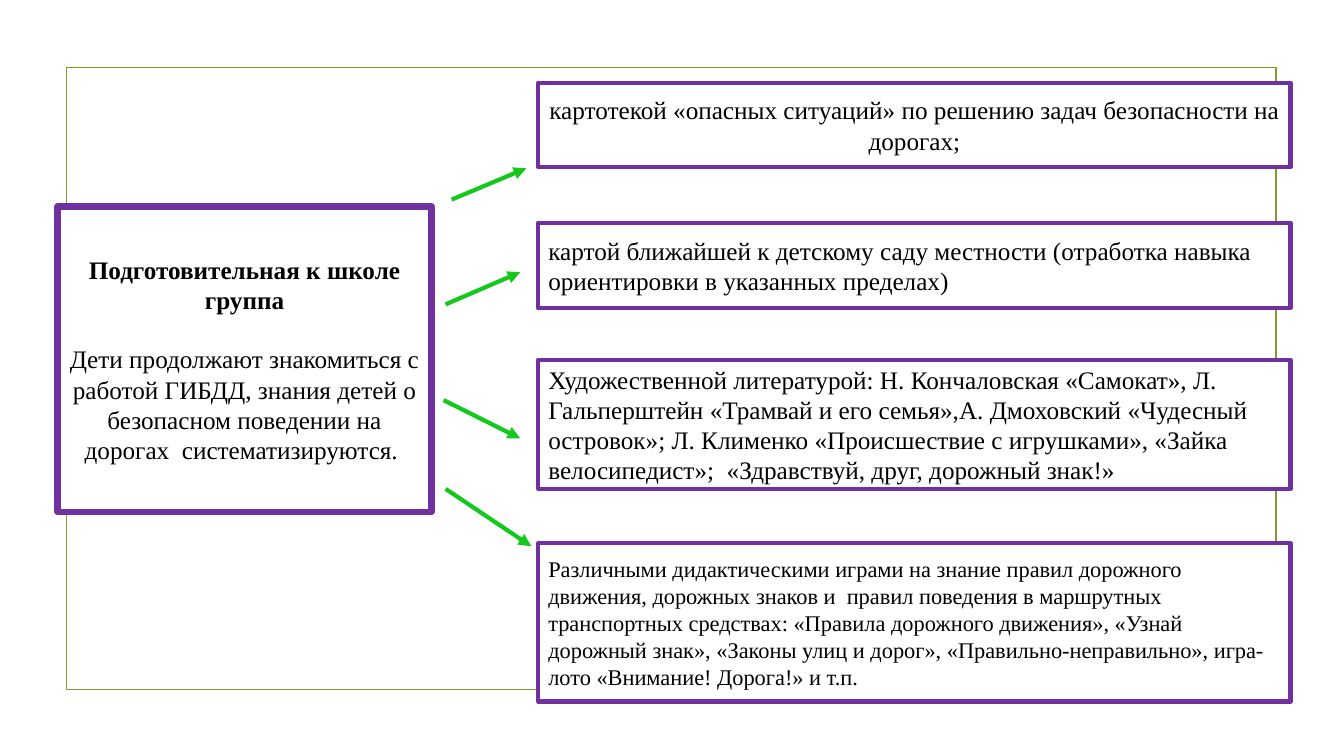
import pptx
import pptx.util
import pptx.dml.color
import pptx.enum.shapes
import pptx.enum.text
import pptx.oxml.ns
import lxml.etree

PX = 9144
ALIGN = pptx.enum.text.PP_ALIGN


def rgb(value):
    return pptx.dml.color.RGBColor.from_string(value)


class Deck:
    font = "Times New Roman"
    ink = "000000"
    paper = "FFFFFF"
    border = "7030A0"
    frame_line = "83992A"
    arrow_line = "16C81E"

    def __init__(self, width, height):
        self.prs = pptx.Presentation()
        self.prs.slide_width = width * PX
        self.prs.slide_height = height * PX
        self.s = self.prs.slides.add_slide(self.prs.slide_layouts[6])

    def rect(self, box, color, weight):
        sp = self.s.shapes.add_shape(
            pptx.enum.shapes.MSO_SHAPE.RECTANGLE, *(v * PX for v in box))
        sp.shadow.inherit = False
        sp.line.color.rgb = rgb(color)
        sp.line.width = pptx.util.Pt(weight)
        return sp

    def frame(self, box):
        self.rect(box, self.frame_line, 1.25).fill.background()

    def card(self, box, paragraphs, weight=3):
        sp = self.rect(box, self.border, weight)
        sp.fill.solid()
        sp.fill.fore_color.rgb = rgb(self.paper)
        tf = sp.text_frame
        tf.word_wrap = True
        tf.vertical_anchor = pptx.enum.text.MSO_ANCHOR.MIDDLE
        for i, (text, font, layout) in enumerate(paragraphs):
            p = tf.add_paragraph() if i else tf.paragraphs[0]
            for name, value in layout.items():
                setattr(p, name, value)
            r = p.add_run()
            r.text = text
            r.font.color.rgb = rgb(self.ink)
            for name, value in {"name": self.font, **font}.items():
                setattr(r.font, name, value)

    def arrow(self, start, end):
        c = self.s.shapes.add_connector(
            pptx.enum.shapes.MSO_CONNECTOR.STRAIGHT,
            *(v * PX for v in start + end))
        c.line.color.rgb = rgb(self.arrow_line)
        c.line.width = pptx.util.Pt(3)
        qn = pptx.oxml.ns.qn
        lxml.etree.SubElement(
            c.line._get_or_add_ln(), qn("a:tailEnd"), type="triangle")
        lxml.etree.SubElement(c._element.spPr, qn("a:effectLst"))


TOPICS = [
    (82, 84, 18, ALIGN.CENTER,
     "картотекой «опасных ситуаций» по решению задач безопасности на "
     "дорогах;"),
    (221, 85, 18, ALIGN.LEFT,
     "картой ближайшей к детскому саду местности (отработка навыка "
     "ориентировки в указанных пределах)"),
    (357, 128, 18, ALIGN.LEFT,
     "Художественной литературой: Н. Кончаловская «Самокат», Л. "
     "Гальперштейн «Трамвай и его семья»,А. Дмоховский «Чудесный "
     "островок»; Л. Клименко «Происшествие с игрушками», «Зайка "
     "велосипедист»;  «Здравствуй, друг, дорожный знак!»"),
    (539, 157, 16, ALIGN.LEFT,
     "Различными дидактическими играми на знание правил дорожного "
     "движения, дорожных знаков и  правил поведения в маршрутных "
     "транспортных средствах: «Правила дорожного движения», «Узнай "
     "дорожный знак», «Законы улиц и дорог», «Правильно-неправильно», "
     "игра-лото «Внимание! Дорога!» и т.п."),
]

ARROWS = [
    ((448, 198), (522, 167)),
    ((442, 302), (516, 270)),
    ((440, 397), (516, 435)),
    ((442, 485), (527, 542)),
]


def main():
    deck = Deck(1333, 750)
    deck.frame((66, 67, 1200, 617))
    size = pptx.util.Pt(18)
    deck.card((57, 205, 371, 303), [
        ("Подготовительная к школе группа",
         {"size": size, "bold": True}, {"alignment": ALIGN.CENTER}),
        ("Дети продолжают знакомиться с работой ГИБДД, знания детей о "
         "безопасном поведении на дорогах  систематизируются. ",
         {"size": size, "bold": False},
         {"alignment": ALIGN.CENTER, "space_before": pptx.util.Pt(21)}),
    ], weight=4.5)
    for top, height, points, align, text in TOPICS:
        deck.card((534, top, 746, height), [
            (text, {"size": pptx.util.Pt(points)}, {"alignment": align})])
    for start, end in ARROWS:
        deck.arrow(start, end)
    deck.prs.save("out.pptx")


if __name__ == "__main__":
    main()
